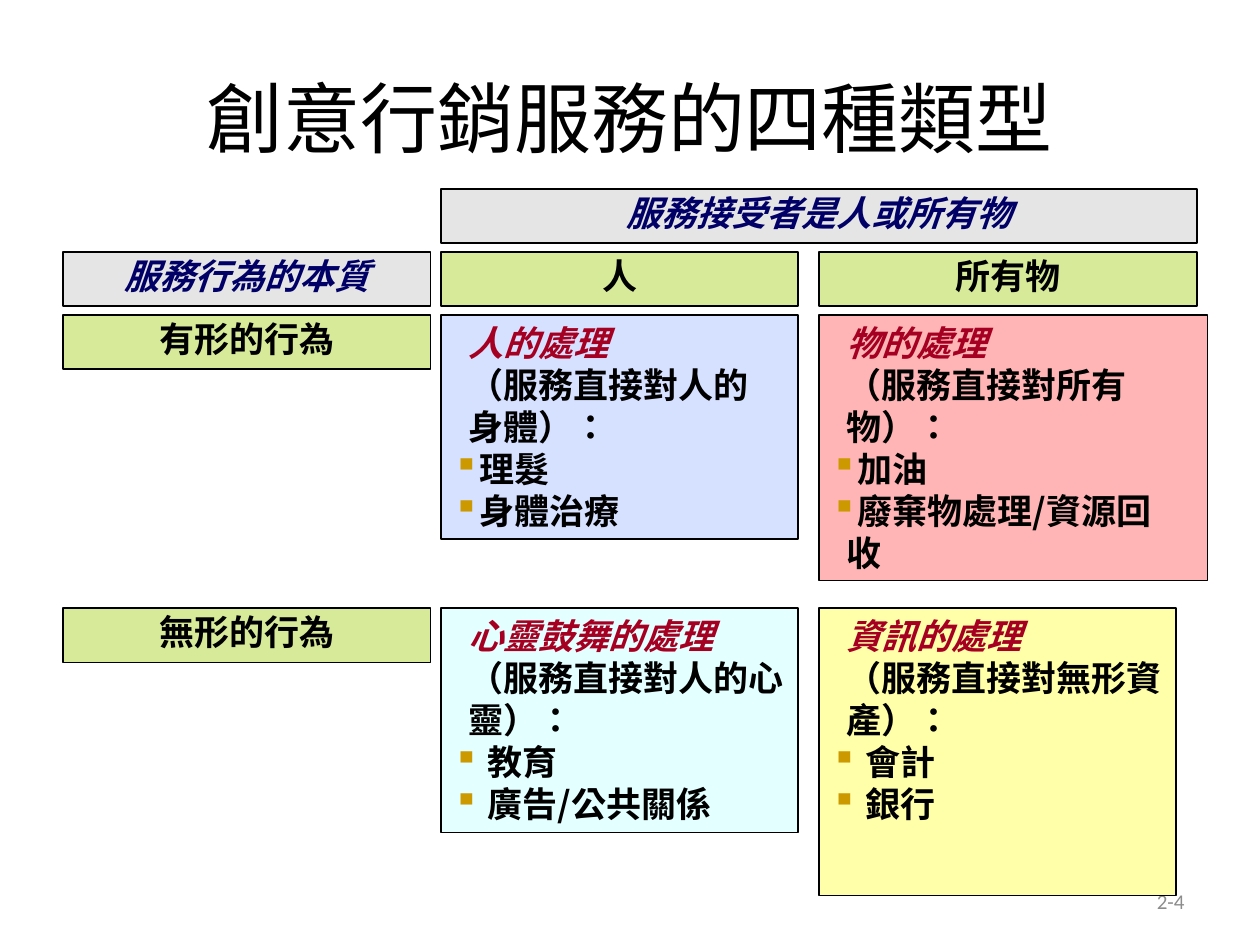
from lxml import etree
from pptx import Presentation
from pptx.dml.color import RGBColor
from pptx.enum import shapes, text
from pptx.oxml.ns import qn
from pptx.util import Cm, Pt

CJK_FONT = "Noto Sans CJK SC"
GREY, GREEN = ("C0C0C0", 40), ("99CC00", 40)
ROW_HEADS, PEOPLE, POSSESSIONS = 1.27, 8.89, 16.51
HEAD_HEIGHT = 1.09
TANGIBLE, INTANGIBLE = 6.35, 12.26


def color(value):
    """Turn a hex string into a colour."""
    return RGBColor.from_string(value)


def add_run(paragraph, words, size, hue, latin=CJK_FONT, bold=False, italic=False):
    """Add one styled run in Traditional Chinese."""
    run = paragraph.add_run()
    run.text = words
    run.font.size, run.font.name = Pt(size), latin
    run.font.bold, run.font.italic = bold, italic
    run.font.color.rgb = color(hue)
    run.font._element.set("lang", "zh-TW")
    east_asian = etree.SubElement(run.font._element, qn("a:ea"))
    east_asian.set("typeface", CJK_FONT)


def add_body(paragraph, words):
    """Add bold black text, broken where the words hold a newline."""
    for number, line in enumerate(words.split("\n")):
        if number:
            paragraph.add_line_break()
        add_run(paragraph, line, 20, "000000", bold=True)


def add_label(slide, box, words, size, hue, align):
    """Add plain text centred vertically in its box."""
    frame = slide.shapes.add_textbox(*map(Cm, box)).text_frame
    frame.word_wrap = True
    frame.vertical_anchor = text.MSO_ANCHOR.MIDDLE
    frame.paragraphs[0].alignment = align
    add_run(frame.paragraphs[0], words, size, hue, latin="Calibri")


def add_panel(slide, box, fill):
    """Add an outlined rectangle with a translucent fill and return its text frame."""
    panel = slide.shapes.add_shape(shapes.MSO_SHAPE.RECTANGLE, *map(Cm, box))
    panel.shadow.inherit = False
    hue, opacity = fill
    panel.fill.solid()
    panel.fill.fore_color.rgb = color(hue)
    tint = panel.fill._xPr.find(qn("a:solidFill"))[0]
    etree.SubElement(tint, qn("a:alpha")).set("val", str(opacity * 1000))
    panel.line.color.rgb = color("000000")
    panel.line.width = Pt(0.75)
    panel.text_frame.word_wrap = True
    panel.text_frame.vertical_anchor = text.MSO_ANCHOR.TOP
    return panel.text_frame


def add_heading(slide, left, top, width, words, fill, hue="000000", italic=False):
    """Add a row or column heading."""
    frame = add_panel(slide, (left, top, width, HEAD_HEIGHT), fill)
    heading = frame.paragraphs[0]
    heading.alignment = text.PP_ALIGN.CENTER
    heading.line_spacing = Pt(22)
    add_run(heading, words, 20, hue, bold=True, italic=italic)


def indent(paragraph, hanging=0):
    """Set the left margin and hanging indent of a left-aligned line."""
    paragraph.alignment = text.PP_ALIGN.LEFT
    paragraph.line_spacing = Pt(24)
    properties = paragraph._p.get_or_add_pPr()
    properties.set("marL", str(Cm(0.3)))
    properties.set("indent", str(-Cm(hanging)))
    return properties


def add_bullet(properties):
    """Give a paragraph a square gold bullet."""
    tint = etree.SubElement(properties, qn("a:buClr"))
    etree.SubElement(tint, qn("a:srgbClr")).set("val", "CC9900")
    etree.SubElement(properties, qn("a:buSzPct")).set("val", "100000")
    etree.SubElement(properties, qn("a:buChar")).set("char", "▪")


def add_category(slide, box, fill, name, scope, examples):
    """Add a service category with its scope and bulleted examples."""
    frame = add_panel(slide, box, fill)
    title = frame.paragraphs[0]
    indent(title)
    add_run(title, name, 20, "A50021", bold=True, italic=True)
    description = frame.add_paragraph()
    indent(description)
    add_body(description, scope)
    for example in examples:
        item = frame.add_paragraph()
        add_bullet(indent(item, 0.3))
        add_body(item, example)


def main():
    """Build the service type matrix."""
    deck = Presentation()
    deck.slide_width, deck.slide_height = Cm(25.4), Cm(19.05)
    slide = deck.slides.add_slide(deck.slide_layouts[6])

    add_label(slide, (18.2, 17.66, 5.93, 1.01), "2-4", 12, "8C8C8C", text.PP_ALIGN.RIGHT)
    add_label(slide, (1.27, 0.76, 22.86, 3.18), "創意行銷服務的四種類型", 44, "000000",
              text.PP_ALIGN.CENTER)

    add_heading(slide, PEOPLE, 3.81, 15.24, "服務接受者是人或所有物", GREY, "000066", True)
    add_heading(slide, ROW_HEADS, 5.08, 7.41, "服務行為的本質", GREY, "000066", True)
    add_heading(slide, PEOPLE, 5.08, 7.2, "人", GREEN)
    add_heading(slide, POSSESSIONS, 5.08, 7.62, "所有物", GREEN)
    add_heading(slide, ROW_HEADS, TANGIBLE, 7.41, "有形的行為", GREEN)
    add_heading(slide, ROW_HEADS, INTANGIBLE, 7.41, "無形的行為", GREEN)

    add_category(slide, (PEOPLE, TANGIBLE, 7.2, 4.52), ("3366FF", 20),
                 "人的處理", "（服務直接對人的\n身體）：", ["理髮", "身體治療"])
    add_category(slide, (POSSESSIONS, TANGIBLE, 7.83, 5.36), ("FF0000", 29),
                 "物的處理", "（服務直接對所有\n物）：", ["加油", "廢棄物處理/資源回\n收"])
    add_category(slide, (PEOPLE, INTANGIBLE, 7.2, 4.52), ("CCFFFF", 53),
                 "心靈鼓舞的處理", "（服務直接對人的心靈）：", [" 教育", " 廣告/公共關係"])
    add_category(slide, (POSSESSIONS, INTANGIBLE, 7.2, 5.8), ("FFFF99", 84),
                 "資訊的處理", "（服務直接對無形資產）：", [" 會計", " 銀行"])

    deck.save("out.pptx")


if __name__ == "__main__":
    main()
